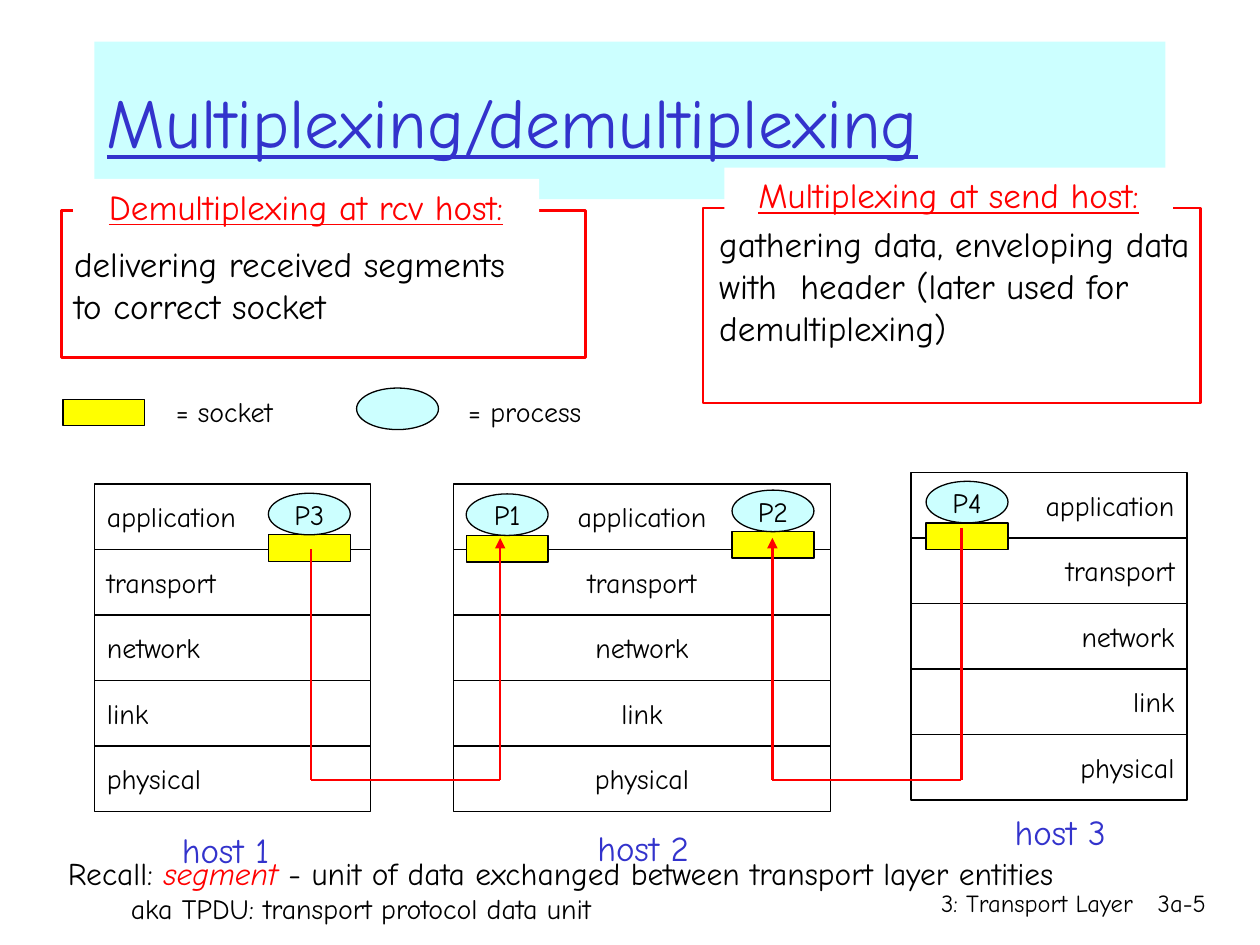
from collections import namedtuple

from lxml import etree
from pptx import Presentation
from pptx import util as u
from pptx.dml.color import RGBColor
from pptx.enum import shapes, text
from pptx.oxml.ns import qn

FONT = "Comic Neue"
COLORS = {"ink": "000000", "blue": "3333CC", "red": "FF0000",
          "sky": "CCFFFF", "yellow": "FFFF00", "paper": "FFFFFF"}
WIDTH, HEIGHT = u.Inches(10), u.Inches(7.5)
COL, ROW = WIDTH / 100, HEIGHT / 75
LAYERS = ["application", "transport", "network", "link", "physical"]
LAYER_ROWS = 5.2
TOKEN_COLS, PROCESS_ROWS, SOCKET_ROWS = 6.5, 3.3, 2.1
LEFT, CENTER, RIGHT = text.PP_ALIGN.LEFT, text.PP_ALIGN.CENTER, text.PP_ALIGN.RIGHT
RECT, OVAL = shapes.MSO_SHAPE.RECTANGLE, shapes.MSO_SHAPE.OVAL

Box = namedtuple("Box", "x y w h")


def rgb(name):
    return RGBColor.from_string(COLORS[name])


def place(box):
    return [round(v) for v in (box.x * COL, box.y * ROW, box.w * COL, box.h * ROW)]


def style(font, size, color, underline=None):
    font.name, font.size, font.underline = FONT, u.Pt(size), underline
    font.color.rgb = rgb(color)


def write(frame, lines, size, color="ink", align=LEFT, wrap=False, underline=None):
    frame.word_wrap = wrap
    for i, line in enumerate(lines):
        paragraph = frame.add_paragraph() if i else frame.paragraphs[0]
        paragraph.text, paragraph.alignment = line, align
        style(paragraph.font, size, color, underline)


def add_block(slide, box, kind=RECT, fill=None, line=None, weight=0.75):
    block = slide.shapes.add_shape(kind, *place(box))
    block.shadow.inherit = False
    if fill:
        block.fill.solid()
        block.fill.fore_color.rgb = rgb(fill)
    else:
        block.fill.background()
    if line:
        block.line.color.rgb = rgb(line)
        block.line.width = u.Pt(weight)
    else:
        block.line.fill.background()
    return block


def add_label(slide, box, lines, size, color="ink", align=CENTER, wrap=False):
    label = slide.shapes.add_textbox(*place(box))
    write(label.text_frame, lines, size, color, align, wrap)
    if not wrap:
        label.text_frame.auto_size = text.MSO_AUTO_SIZE.SHAPE_TO_FIT_TEXT


def add_title(slide, box):
    title = add_block(slide, box, fill="sky")
    write(title.text_frame, ["Multiplexing/demultiplexing"], 40, "blue",
          wrap=True, underline=True)


def add_host(slide, box, align):
    for i, layer in enumerate(LAYERS):
        row = Box(box.x, box.y + i * LAYER_ROWS, box.w, LAYER_ROWS)
        block = add_block(slide, row, fill="paper", line="ink")
        write(block.text_frame, [layer], 16, align=align)


def add_socket(slide, x, y):
    add_block(slide, Box(x, y, TOKEN_COLS, SOCKET_ROWS), fill="yellow", line="ink")


def add_process(slide, x, y, name=None):
    process = add_block(slide, Box(x, y, TOKEN_COLS, PROCESS_ROWS), OVAL, "sky", "ink")
    if name:
        write(process.text_frame, [name], 16, align=CENTER)


def add_message(slide, sender, receiver, start, bottom, end):
    points = [(sender, start), (sender, bottom), (receiver, bottom), (receiver, end)]
    for (x1, y1), (x2, y2) in zip(points, points[1:]):
        leg = slide.shapes.add_connector(
            shapes.MSO_CONNECTOR.STRAIGHT, round(x1 * COL), round(y1 * ROW),
            round(x2 * COL), round(y2 * ROW))
        leg.line.color.rgb = rgb("red")
        leg.line.width = u.Pt(1.5)
        properties = leg.element.spPr
        etree.SubElement(properties, qn("a:effectLst"))
    etree.SubElement(properties.find(qn("a:ln")), qn("a:tailEnd"), type="triangle")


def add_legend(slide, box):
    add_socket(slide, box.x, box.y + 0.9)
    add_label(slide, Box(box.x + 7.5, box.y, 10.6, box.h), ["= socket"], 16)
    add_process(slide, box.x + 23.3, box.y)
    add_label(slide, Box(box.x + 30.8, box.y, 11.7, box.h), ["= process"], 16)


def add_heading(slide, box, heading):
    tag = add_block(slide, box, fill="paper")
    write(tag.text_frame, [heading], 20, "red", CENTER, underline=True)
    tag.text_frame.vertical_anchor = text.MSO_ANCHOR.TOP
    tag.text_frame.auto_size = text.MSO_AUTO_SIZE.SHAPE_TO_FIT_TEXT


def add_demultiplexing(slide, box):
    frame = add_block(slide, box, line="red", weight=1.5)
    write(frame.text_frame, ["delivering received segments", "to correct socket"], 20)
    add_heading(slide, Box(box.x + 0.9, box.y - 2.5, 37, 4.3),
                "Demultiplexing at rcv host:")


def add_multiplexing(slide, box):
    add_label(slide, Box(box.x + 0.3, box.y + 0.7, 43.8, 11.1),
              ["gathering data, enveloping data", "with  header (later used for",
               "demultiplexing)"], 20, align=LEFT)
    add_block(slide, box, line="red", weight=1.5)
    add_heading(slide, Box(box.x + 1.7, box.y - 3.2, 35.6, 4.3),
                "Multiplexing at send host:")


def add_recall(slide, box):
    frame = slide.shapes.add_textbox(*place(box)).text_frame
    frame.word_wrap = True
    recall, alias = frame.paragraphs[0], frame.add_paragraph()
    alias.level = 1
    for paragraph, size, margin, indent in [(recall, 18, 3.8, -3.8), (alias, 16, 8.1, -3.1)]:
        style(paragraph.font, size, "ink")
        paragraph.line_spacing = 0.8
        paragraph.space_before = u.Pt(size * 0.2)
        properties = paragraph._p.get_or_add_pPr()
        properties.set("marL", str(round(margin * COL)))
        properties.set("indent", str(round(indent * COL)))
    for words, color in [("Recall: ", "ink"), ("segment ", "red"),
                         ("- unit of data exchanged between transport layer entities", "ink")]:
        run = recall.add_run()
        run.text = words
        style(run.font, 18, color)
        run.font.italic = color == "red"
    alias.text = "aka TPDU: transport protocol data unit"


def add_footer(slide, box):
    add_label(slide, Box(box.x, box.y, 31.7, box.h), ["3: Transport Layer"], 14,
              align=RIGHT, wrap=True)
    add_label(slide, Box(box.x + 30.1, box.y, 7.4, box.h), ["3a-5"], 14,
              align=RIGHT, wrap=True)


def main():
    deck = Presentation()
    deck.slide_width, deck.slide_height = WIDTH, HEIGHT
    slide = deck.slides.add_slide(deck.slide_layouts[6])

    add_footer(slide, Box(59.2, 70, 37.5, 5))
    add_title(slide, Box(7.5, 3.3, 85, 12.5))

    stack = len(LAYERS) * LAYER_ROWS
    add_host(slide, Box(7.5, 38.4, 21.9, stack), LEFT)
    add_host(slide, Box(72.3, 37.5, 21.9, stack), RIGHT)
    add_host(slide, Box(36, 38.4, 29.9, stack), CENTER)
    for name, x, y in [("P2", 58.1, 38.9), ("P3", 21.3, 39.15),
                       ("P4", 73.5, 38.2), ("P1", 37, 39.2)]:
        add_socket(slide, x, y + PROCESS_ROWS)
        add_process(slide, x, y, name)
    for host, x, y, w in [("host 1", 13, 65.3, 9.8), ("host 2", 45.9, 65.1, 10.3),
                          ("host 3", 79, 63.8, 10.3)]:
        add_label(slide, Box(x, y, w, 4.3), [host], 20, "blue")
    add_message(slide, 24.7, 39.7, 43.6, 61.9, 42.7)
    add_message(slide, 76.3, 61.3, 41.9, 61.9, 42.7)

    add_legend(slide, Box(5, 30.8, 42.5, 3.7))
    add_demultiplexing(slide, Box(4.9, 16.7, 41.6, 11.7))
    add_multiplexing(slide, Box(55.8, 16.5, 39.5, 15.5))
    add_recall(slide, Box(4.4, 67.9, 90.1, 6.8))
    deck.save("out.pptx")


if __name__ == "__main__":
    main()
